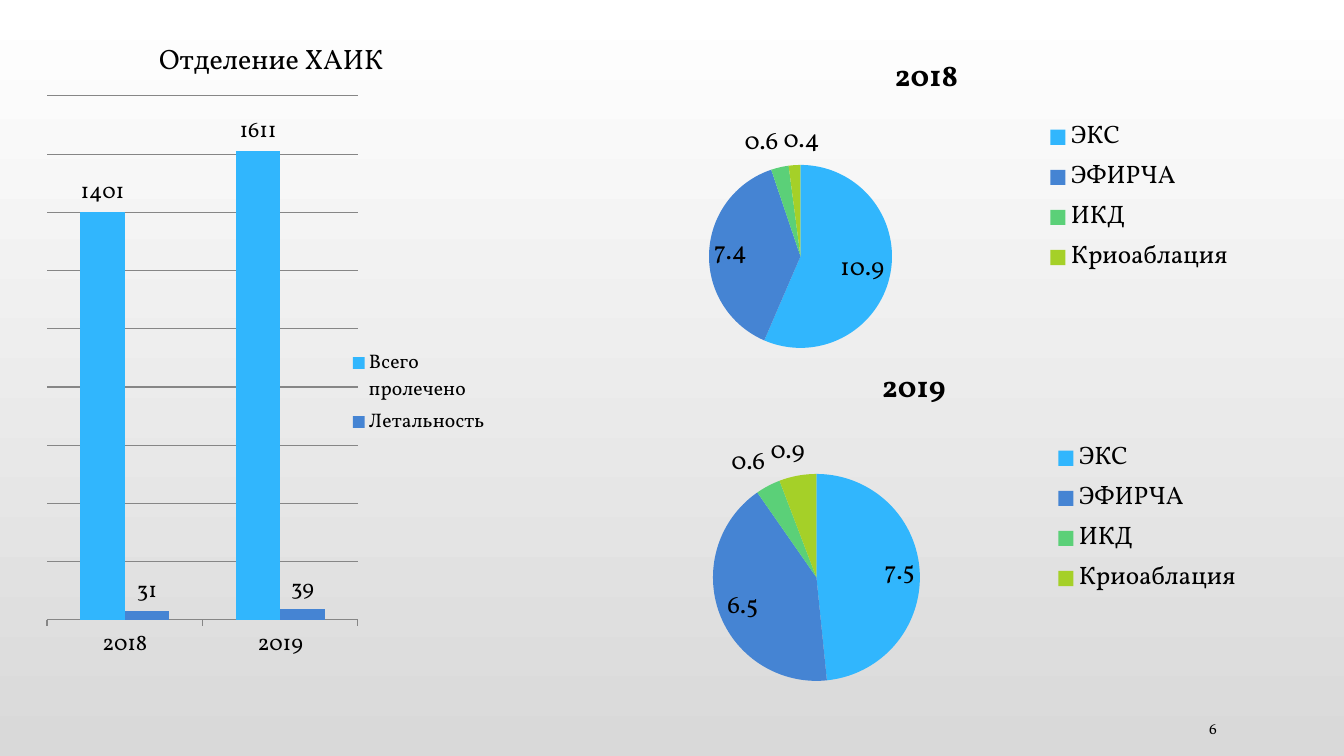
import pptx
import pptx.util
import pptx.chart.data
import pptx.dml.color
import pptx.enum.chart
import pptx.enum.text
import pptx.oxml
import pptx.oxml.ns

RGB = pptx.dml.color.RGBColor
BLACK = RGB(0x00, 0x00, 0x00)
WHITE = RGB(0xFF, 0xFF, 0xFF)
PALE_GREY = RGB(0xD9, 0xD9, 0xD9)
GRID_GREY = RGB(0x86, 0x86, 0x86)
SKY = RGB(0x31, 0xB6, 0xFD)
BLUE = RGB(0x45, 0x84, 0xD3)
GREEN = RGB(0x5B, 0xD0, 0x78)
LIME = RGB(0xA5, 0xD0, 0x28)

FONT = "Vollkorn"
EMU_PER_PX = 914400 / 100.8
ALIGN = pptx.enum.text.PP_ALIGN
ANCHOR = pptx.enum.text.MSO_ANCHOR
CHART_TYPE = pptx.enum.chart.XL_CHART_TYPE
LABEL_POSITION = pptx.enum.chart.XL_LABEL_POSITION
TICK_MARK = pptx.enum.chart.XL_TICK_MARK


def px(length):
    return pptx.util.Emu(round(length * EMU_PER_PX))


class SlideBuilder:
    """Holds the style and the current slide; every box is (left, top, width, height) in px."""

    def __init__(self, presentation):
        layout = presentation.slide_layouts[5]  # title only
        self.slide = presentation.slides.add_slide(layout)

    def background(self, bottom, top):
        fill = self.slide.background.fill
        fill.gradient()
        fill.gradient_angle = 90
        for stop, color in zip(fill.gradient_stops, (bottom, top)):
            stop.color.rgb = color

    def style_font(self, font, size, bold=False):
        font.name = FONT
        font.size = pptx.util.Pt(size)
        font.bold = bold
        font.color.rgb = BLACK

    def fill_text(self, shape, box, text, size, align, anchor):
        shape.left, shape.top, shape.width, shape.height = map(px, box)
        frame = shape.text_frame
        frame.word_wrap = True
        frame.auto_size = pptx.enum.text.MSO_AUTO_SIZE.NONE
        frame.vertical_anchor = anchor
        paragraph = frame.paragraphs[0]
        paragraph.alignment = align
        run = paragraph.add_run()
        run.text = text
        self.style_font(run.font, size)

    def title(self, box, text, size):
        self.fill_text(self.slide.shapes.title, box, text, size, ALIGN.LEFT, ANCHOR.TOP)

    def text(self, box, text, size, align):
        shape = self.slide.shapes.add_textbox(*map(px, box))
        self.fill_text(shape, box, text, size, align, ANCHOR.MIDDLE)

    def place(self, element, index, chart_box, box, inner=False):
        """Fix the plot or legend at a slide position, as fractions of the chart."""
        for old in element.findall(pptx.oxml.ns.qn("c:layout")):
            element.remove(old)
        left, top, width, height = chart_box
        values = {
            "x": (box[0] - left) / width,
            "y": (box[1] - top) / height,
            "w": box[2] / width,
            "h": box[3] / height,
        }
        target = '<c:layoutTarget val="inner"/>' if inner else ""
        modes = '<c:xMode val="edge"/><c:yMode val="edge"/>'
        sizes = "".join(f'<c:{key} val="{value:.4f}"/>' for key, value in values.items())
        element.insert(index, pptx.oxml.parse_xml(
            f'<c:layout {pptx.oxml.ns.nsdecls("c")}><c:manualLayout>'
            f"{target}{modes}{sizes}</c:manualLayout></c:layout>"))

    def chart(self, kind, box, plot_box, legend_box, categories, series, size, legend_size):
        data = pptx.chart.data.CategoryChartData()
        data.categories = categories
        for name, values in series:
            data.add_series(name, values)
        chart = self.slide.shapes.add_chart(kind, *map(px, box), data).chart
        self.style_font(chart.font, size)
        chart.has_title = False
        chart.has_legend = True
        chart.legend.position = pptx.enum.chart.XL_LEGEND_POSITION.RIGHT
        chart.legend.include_in_layout = False
        self.style_font(chart.legend.font, legend_size)
        self.place(chart.legend._element, 1, box, legend_box)
        plot_area = chart._chartSpace.chart.plotArea
        self.place(plot_area, 0, box, plot_box, inner=True)
        return chart

    def label_values(self, plot, size, position):
        plot.has_data_labels = True
        labels = plot.data_labels
        labels.show_value = True
        labels.position = position
        self.style_font(labels.font, size)

    def columns(self, box, plot_box, legend_box, categories, series, colors):
        chart = self.chart(CHART_TYPE.COLUMN_CLUSTERED, box, plot_box, legend_box,
                           categories, series, 16, 14)
        plot = chart.plots[0]
        plot.vary_by_categories = False
        plot.gap_width = 150
        plot.overlap = 0
        self.label_values(plot, 16, LABEL_POSITION.OUTSIDE_END)
        for column, color in zip(plot.series, colors):
            column.format.fill.solid()
            column.format.fill.fore_color.rgb = color
        value_axis = chart.value_axis
        value_axis.visible = False
        value_axis.minimum_scale, value_axis.maximum_scale = 0, 1800
        value_axis.major_unit = 200
        value_axis.has_major_gridlines = True
        category_axis = chart.category_axis
        category_axis.major_tick_mark = TICK_MARK.OUTSIDE
        for line in (value_axis.major_gridlines.format.line, category_axis.format.line):
            line.color.rgb = GRID_GREY
            line.width = pptx.util.Pt(0.75)

    def pie(self, box, plot_box, legend_box, categories, name, values, colors):
        chart = self.chart(CHART_TYPE.PIE, box, plot_box, legend_box,
                           categories, [(name, values)], 18, 18)
        chart.has_title = True
        run = chart.chart_title.text_frame.paragraphs[0].add_run()
        run.text = name
        self.style_font(run.font, 21.6, bold=True)
        chart.chart_title.include_in_layout = False
        plot = chart.plots[0]
        plot.vary_by_categories = True
        self.label_values(plot, 18, LABEL_POSITION.BEST_FIT)
        for index, color in enumerate(colors):
            fill = plot.series[0].points[index].format.fill
            fill.solid()
            fill.fore_color.rgb = color


def main():
    presentation = pptx.Presentation()
    presentation.slide_width, presentation.slide_height = px(1344), px(756)
    builder = SlideBuilder(presentation)
    builder.background(PALE_GREY, WHITE)

    # Heading and page number
    builder.title((149, 36, 254, 44), "Отделение ХАИК", 20)
    builder.text((1134, 715, 93, 26), "6", 11, ALIGN.RIGHT)

    # Patients treated and mortality by year
    builder.columns(
        (37, 85, 484, 588), (47, 96, 311, 524), (346, 345, 146, 95),
        ["2018", "2019"],
        [("Всего пролечено", (1401, 1611)), ("Летальность", (31, 39))],
        (SKY, BLUE))

    # Procedure shares, one pie per year
    procedures = ["ЭКС", "ЭФИРЧА", "ИКД", "Криоаблация"]
    pies = (
        ("2018", (10.9, 7.4, 0.6, 0.4), (609, 36, 635, 326),
         (709, 165, 183, 183), (1042, 115, 194, 165)),
        ("2019", (7.5, 6.5, 0.6, 0.9), (577, 347, 674, 349),
         (713, 474, 207, 207), (1050, 436, 194, 165)),
    )
    for year, values, box, plot_box, legend_box in pies:
        builder.pie(box, plot_box, legend_box, procedures, year, values,
                    (SKY, BLUE, GREEN, LIME))

    presentation.save("out.pptx")


if __name__ == "__main__":
    main()
